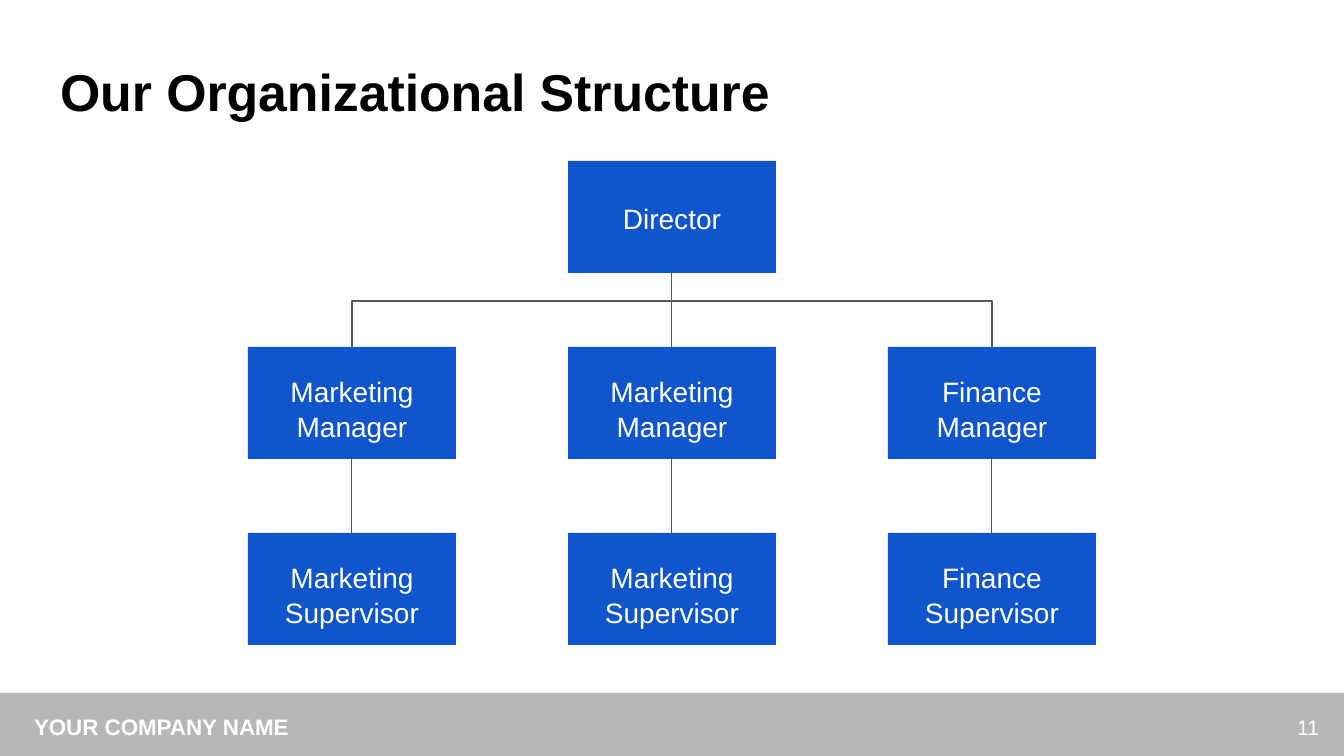
import collections

import lxml.etree
import pptx
import pptx.dml.color
import pptx.enum.shapes
import pptx.enum.text
import pptx.oxml.ns
import pptx.util

Box = collections.namedtuple("Box", "left top width height")
ALIGN = pptx.enum.text.PP_ALIGN
ANCHOR = pptx.enum.text.MSO_ANCHOR
SHAPE = pptx.enum.shapes.MSO_SHAPE
LINE = pptx.enum.shapes.MSO_CONNECTOR

PAGE = Box(0, 0, 1344, 756)
BOTTOM, TOP = 2, 0  # connection sites of a rectangle

THEME = {
    "font": "Arial",
    "colors": {"title": "000000", "light": "FFFFFF", "node": "1155CC",
               "bar": "B7B7B7", "line": "595959"},
    "sizes": {"title": 37, "node": 20, "company": 16, "number": 15},
    "line_width": 0.75,
    "line_spacing": 1.05,
}

DIRECTOR = "Director"
TEAMS = [("Marketing Manager", "Marketing Supervisor"),
         ("Marketing Manager", "Marketing Supervisor"),
         ("Finance Manager", "Finance Supervisor")]


def px(length):
    return pptx.util.Emu(round(length * 12192000 / PAGE.width))


def emu(box):
    return [px(length) for length in box]


def color(name):
    return pptx.dml.color.RGBColor.from_string(THEME["colors"][name])


def apply(target, values):
    for name, value in values.items():
        setattr(target, name, value)


def write(shape, text, size, ink, insets, bold=False, align=ALIGN.LEFT,
          anchor=ANCHOR.TOP, spacing=1.0):
    frame = shape.text_frame
    apply(frame, {"word_wrap": True, "vertical_anchor": anchor,
                  "auto_size": pptx.enum.text.MSO_AUTO_SIZE.NONE})
    sides = ("margin_left", "margin_top", "margin_right", "margin_bottom")
    apply(frame, dict(zip(sides, map(px, insets))))
    para = frame.paragraphs[0]
    apply(para, {"alignment": align, "line_spacing": spacing})
    span = para.add_run()
    span.text = text
    apply(span.font, {"name": THEME["font"], "bold": bold,
                      "size": pptx.util.Pt(THEME["sizes"][size])})
    span.font.color.rgb = color(ink)


def add_block(page, box, fill):
    block = page.shapes.add_shape(SHAPE.RECTANGLE, *emu(box))
    block.shadow.inherit = False
    block.fill.solid()
    block.fill.fore_color.rgb = color(fill)
    block.line.fill.background()
    return block


def style_line(line):
    line.color.rgb = color("line")
    line.width = pptx.util.Pt(THEME["line_width"])


def add_link(page, upper, lower):
    link = page.shapes.add_connector(LINE.STRAIGHT, 0, 0, 0, 0)
    link.begin_connect(upper, BOTTOM)
    link.end_connect(lower, TOP)
    style_line(link.line)
    properties = link._element.spPr
    lxml.etree.SubElement(properties, pptx.oxml.ns.qn("a:effectLst"))


def add_bracket(page, box):
    right, bottom = box.left + box.width, box.top + box.height
    outline = page.shapes.build_freeform(px(box.left), px(bottom))
    corners = [(box.left, box.top), (right, box.top), (right, bottom)]
    outline.add_line_segments([(px(x), px(y)) for x, y in corners], close=False)
    bracket = outline.convert_to_shape()
    bracket.shadow.inherit = False
    bracket.fill.background()
    style_line(bracket.line)


def add_title(page, box):
    title = page.shapes.title
    apply(title, dict(zip(Box._fields, emu(box))))
    write(title, "Our Organizational Structure", "title", "title", [13] * 4,
          bold=True, spacing=THEME["line_spacing"])


def add_footer(page, box):
    add_block(page, box, "bar")
    company = page.shapes.add_textbox(
        *emu(Box(box.left + 24, box.top, 386, box.height)))
    write(company, "YOUR COMPANY NAME", "company", "light", [10, 20, 10, 10],
          bold=True)
    number = page.shapes.add_textbox(
        *emu(Box(box.left + box.width - 120, box.top + 14, 105, 40)))
    write(number, "11", "number", "light", [10, 5, 10, 5],
          align=ALIGN.RIGHT, anchor=ANCHOR.MIDDLE)


def add_chart_of_roles(page, box):
    width, height = 208, 112
    column_step = (box.width - width) / (len(TEAMS) - 1)
    row_step = (box.height - height) / 2

    def add_role(column, row, text, text_top):
        place = Box(box.left + column * column_step,
                    box.top + row * row_step, width, height)
        role = add_block(page, place, "node")
        write(role, text, "node", "light", [27, text_top, 27, 0],
              align=ALIGN.CENTER, spacing=THEME["line_spacing"])
        return role

    # Bracket over the managers
    bracket_top = box.top + height + 28
    add_bracket(page, Box(box.left + width / 2, bracket_top,
                          box.width - width, box.top + row_step - bracket_top))

    # Roles and the lines between them
    middle = len(TEAMS) // 2
    director = add_role(middle, 0, DIRECTOR, 39)
    for column, (manager_text, supervisor_text) in enumerate(TEAMS):
        manager = add_role(column, 1, manager_text, 26)
        supervisor = add_role(column, 2, supervisor_text, 26)
        add_link(page, manager, supervisor)
        if column == middle:
            add_link(page, director, manager)


def main():
    deck = pptx.Presentation()
    apply(deck, {"slide_width": px(PAGE.width), "slide_height": px(PAGE.height)})
    page = deck.slides.add_slide(deck.slide_layouts.get_by_name("Title Only"))
    add_footer(page, Box(0, 693, PAGE.width, 63))
    add_title(page, Box(47, 44, 1159, 88))
    add_chart_of_roles(page, Box(248, 161, 848, 484))
    deck.save("out.pptx")


if __name__ == "__main__":
    main()
